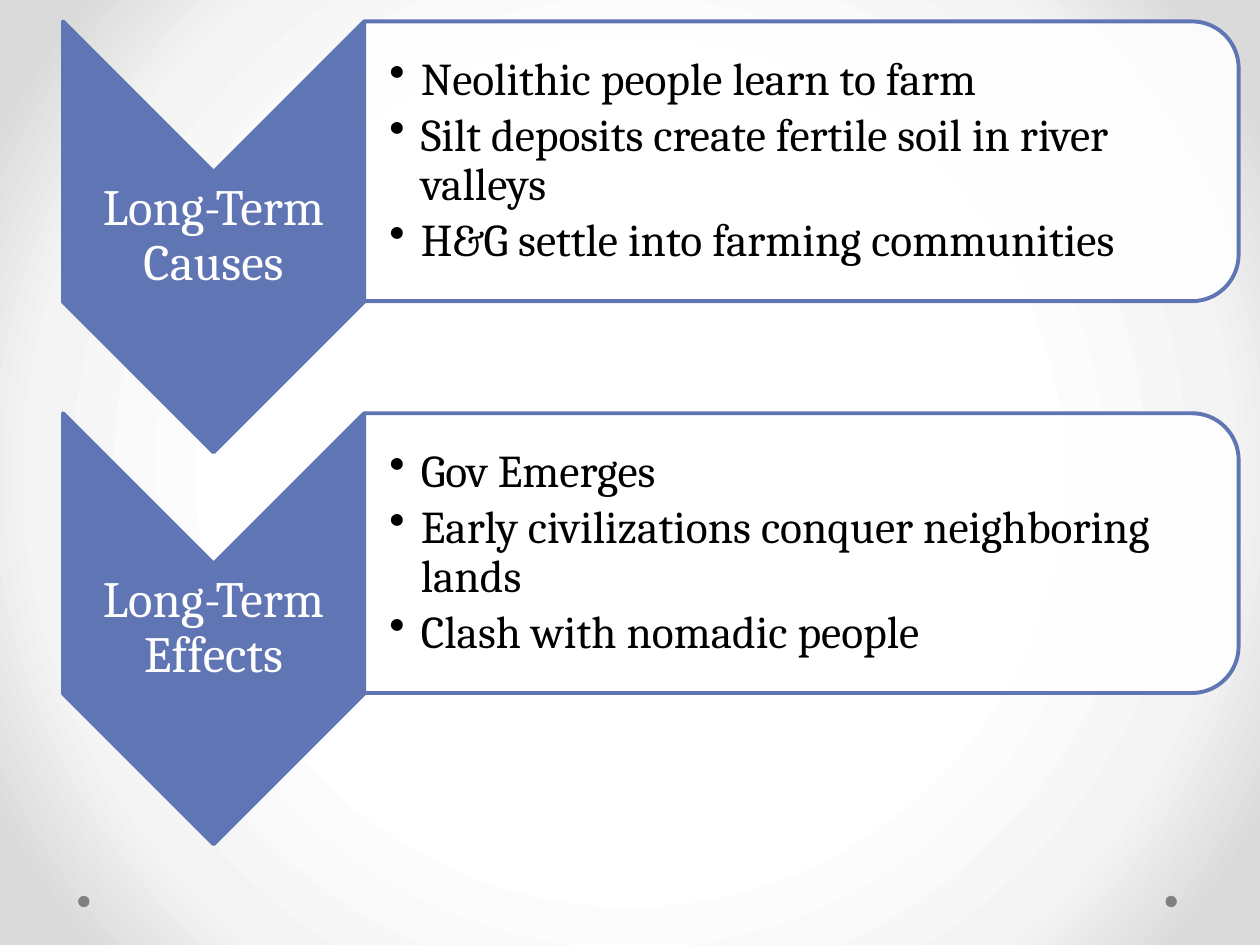
from lxml import etree
from pptx import Presentation
from pptx.dml.color import RGBColor
from pptx.enum.shapes import MSO_SHAPE as Shape
from pptx.enum.text import MSO_ANCHOR as Anchor, PP_ALIGN as Align
from pptx.oxml import parse_xml
from pptx.oxml.ns import qn
from pptx.util import Inches, Pt

BLUE, WHITE, BLACK, GRAY = "6076B4", "FFFFFF", "000000", "808080"
NS = 'xmlns:a="http://schemas.openxmlformats.org/drawingml/2006/main"'
ROWS = [
    ("Long-Term Causes", [
        "Neolithic people learn to farm",
        "Silt deposits create fertile soil in river valleys",
        "H&G settle into farming communities"]),
    ("Long-Term Effects", [
        "Gov Emerges",
        "Early civilizations conquer neighboring lands",
        "Clash with nomadic people"]),
]


def color(code):
    return RGBColor.from_string(code)


def add_node(parent, tag, **attrs):
    return etree.SubElement(parent, qn(tag), **attrs)


def add_back(slide):
    """Radial gradient, white in the middle and gray at the corners."""
    fill = slide.background.fill
    fill.gradient()
    grad = slide.background._cSld.find(".//" + qn("a:gradFill"))
    stops = [(50, WHITE), (76, "F4F4F4"), (92, "DADADA")]
    marks = "".join(f'<a:gs pos="{pos * 1000}"><a:srgbClr val="{code}"/></a:gs>'
                    for pos, code in stops)
    grad.getparent().replace(grad, parse_xml(
        f'<a:gradFill {NS} rotWithShape="1"><a:gsLst>{marks}</a:gsLst>'
        '<a:path path="circle"><a:fillToRect l="50000" t="50000" r="50000" '
        'b="50000"/></a:path></a:gradFill>'))


def add_solid(slide, kind, x, y, w, h, fill, line=None):
    shape = slide.shapes.add_shape(kind, Inches(x), Inches(y), Inches(w), Inches(h))
    shape.shadow.inherit = False
    shape.fill.solid()
    shape.fill.fore_color.rgb = color(fill)
    if line:
        shape.line.color.rgb = color(line)
        shape.line.width = Pt(2.25)
    else:
        shape.line.fill.background()
    return shape


def add_turned(slide, kind, x, y, w, h, fill):
    """Shape turned by 90 degrees that covers the given box."""
    shift = (w - h) / 2
    shape = add_solid(slide, kind, x + shift, y - shift, h, w, fill, BLUE)
    shape.rotation = 90
    return shape


def add_text(slide, x, y, w, h, lines, size, code, after, inset=0.02):
    box = slide.shapes.add_textbox(Inches(x), Inches(y), Inches(w), Inches(h))
    frame = box.text_frame
    frame.word_wrap = True
    frame.vertical_anchor = Anchor.MIDDLE
    frame.margin_left = Inches(inset)
    frame.margin_top = frame.margin_right = frame.margin_bottom = Inches(0.02)
    frame.text = "\n".join(lines)
    for para in frame.paragraphs:
        para.line_spacing = 0.9
        gap = add_node(para._p.get_or_add_pPr(), "a:spcAft")
        add_node(gap, "a:spcPct", val=str(after * 1000))
        for run in para.runs:
            run.font.name = "Cambria"
            run.font.size = Pt(size)
            run.font.color.rgb = color(code)
    return frame


def add_arrow(slide, x, y, w, h, label):
    add_turned(slide, Shape.CHEVRON, x, y, w, h, BLUE)
    # The label sits between the notch and the point
    frame = add_text(slide, x, y + w / 2, w, h - w, [label], 29, WHITE, 35)
    frame.paragraphs[0].alignment = Align.CENTER


def add_panel(slide, x, y, w, h, points):
    panel = add_turned(slide, Shape.ROUND_2_SAME_RECTANGLE, x, y, w, h, WHITE)
    tint = panel._element.spPr.find(qn("a:solidFill"))[0]
    add_node(tint, "a:alpha", val="90000")
    # The text keeps clear of the round corners
    pad = 0.11
    frame = add_text(slide, x, y + pad, w - pad, h - 2 * pad, points, 26, BLACK, 15, 0.2)
    for para in frame.paragraphs:
        para.level = 1
        props = para._p.get_or_add_pPr()
        props.set("marL", str(Inches(0.25)))
        props.set("indent", str(-Inches(0.25)))
        add_node(props, "a:buChar", char="•")


def add_row(slide, x, y, w, label, points):
    side = 2.39
    add_arrow(slide, x, y, side, 3.42, label)
    add_panel(slide, x + side, y, w - side, 2.22, points)


def main():
    deck = Presentation()
    deck.slide_width, deck.slide_height = Inches(10), Inches(7.5)
    slide = deck.slides.add_slide(deck.slide_layouts[6])
    add_back(slide)
    # Corner dots
    for x in (9.25, 0.62):
        add_solid(slide, Shape.OVAL, x, 7.11, 0.09, 0.09, GRAY)
    # Causes and effects
    for i, (label, points) in enumerate(ROWS):
        add_row(slide, 0.5, 0.17 + i * 3.11, 9.33, label, points)
    deck.save("out.pptx")


if __name__ == "__main__":
    main()
